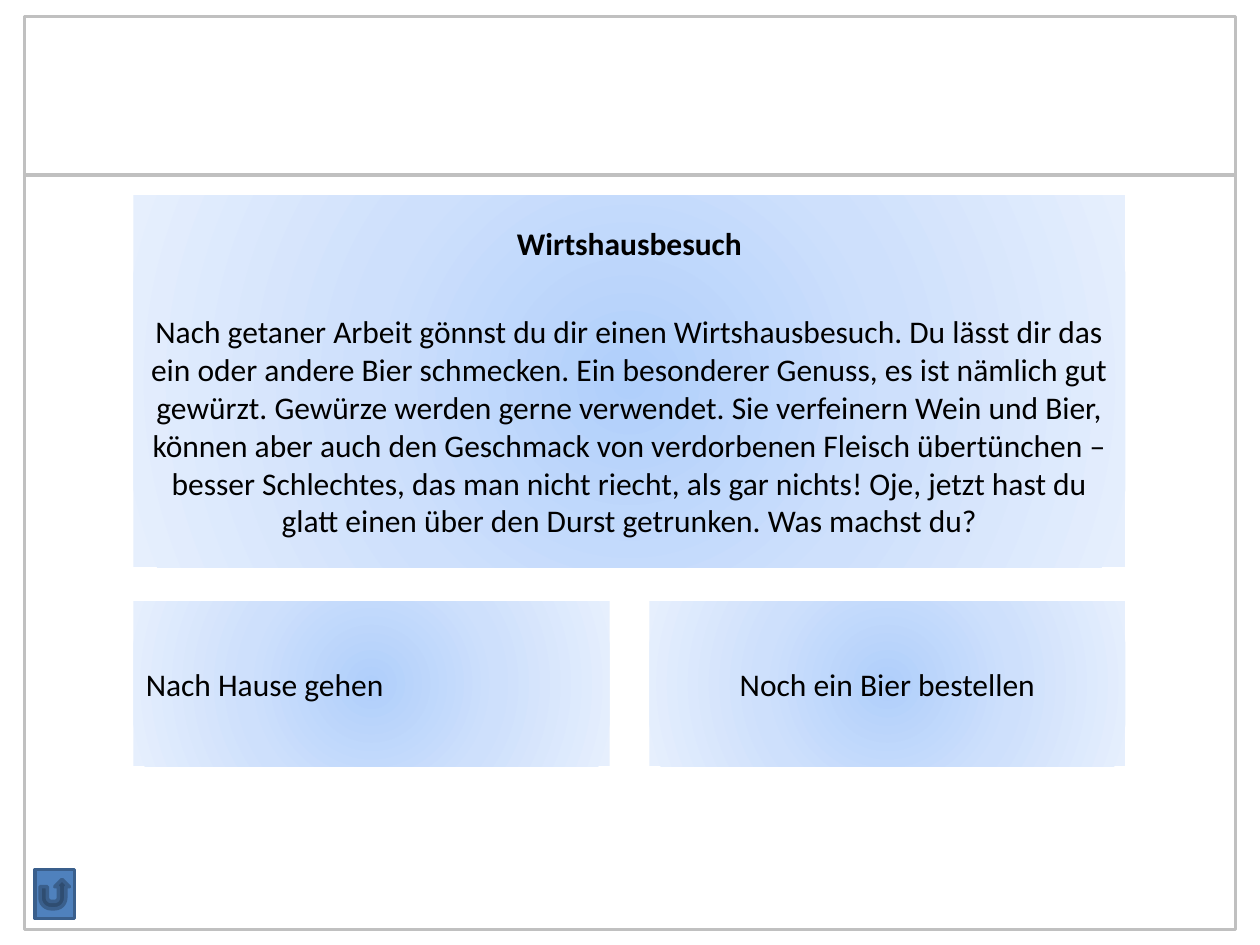
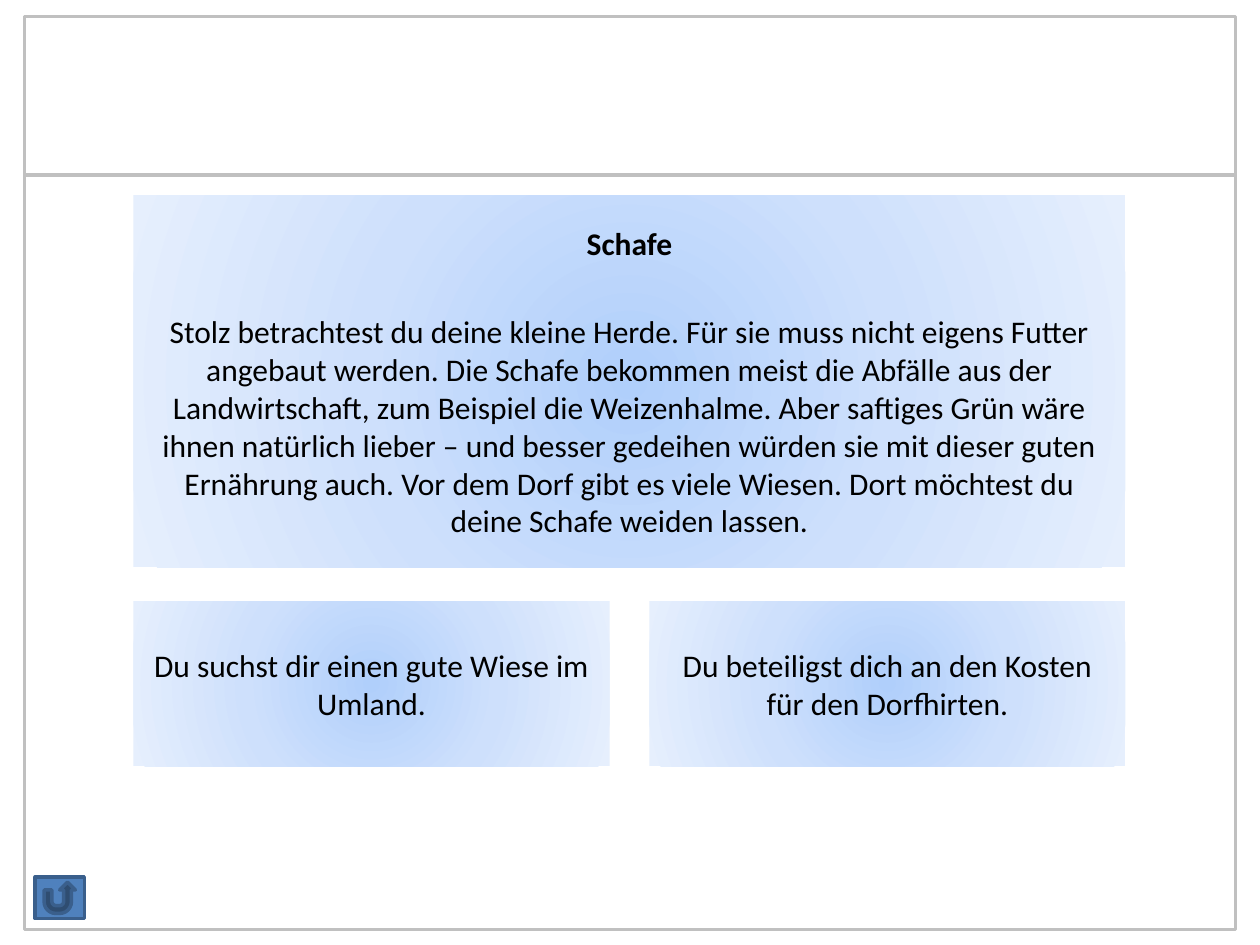
"""Build two decision slides, each with a story panel, two choices and a return button."""
from pptx import Presentation
from pptx.dml.color import RGBColor
from pptx.enum.shapes import MSO_SHAPE as Shape
from pptx.enum.text import MSO_ANCHOR as Anchor, PP_ALIGN as Align
from pptx.oxml import parse_xml
from pptx.oxml.ns import nsdecls, qn
from pptx.util import Cm, Pt

FONT = "Calibri"
TEXT, FRAME, BUTTON, BUTTON_EDGE = "000000", "C0C0C0", "4F81BD", "3A5F8C"
GLOW = [(0, "B0CFFB"), (50, "CEE0FC"), (100, "E6EFFD")]
LEFT, FULL_WIDTH, CHOICE_WIDTH = 2.69, 20, 9.6
CHOICE_LEFTS = [LEFT, LEFT + FULL_WIDTH - CHOICE_WIDTH]
BUTTON_BOTTOM = 18.52

stops = "".join(
    f'<a:gs pos="{percent * 1000}"><a:srgbClr val="{shade}"/></a:gs>' for percent, shade in GLOW
)
GLOW_XML = (
    f'<a:gradFill {nsdecls("a")} rotWithShape="1"><a:gsLst>{stops}</a:gsLst><a:path path="circle">'
    '<a:fillToRect l="50000" t="50000" r="50000" b="50000"/></a:path></a:gradFill>'
)

SCENES = [
    {
        "title": "Wirtshausbesuch",
        "story": "Nach getaner Arbeit gönnst du dir einen Wirtshausbesuch. Du lässt dir das ein "
        "oder andere Bier schmecken. Ein besonderer Genuss, es ist nämlich gut gewürzt. Gewürze "
        "werden gerne verwendet. Sie verfeinern Wein und Bier, können aber auch den Geschmack von "
        "verdorbenen Fleisch übertünchen – besser Schlechtes, das man nicht riecht, als gar "
        "nichts! Oje, jetzt hast du glatt einen über den Durst getrunken. Was machst du?",
        "choices": [("Nach Hause gehen", Align.LEFT), ("Noch ein Bier bestellen", Align.CENTER)],
        "button": (0.79, 0.99),
    },
    {
        "title": "Schafe",
        "story": "Stolz betrachtest du deine kleine Herde. Für sie muss nicht eigens Futter "
        "angebaut werden. Die Schafe bekommen meist die Abfälle aus der Landwirtschaft, zum "
        "Beispiel die Weizenhalme. Aber saftiges Grün wäre ihnen natürlich lieber – und besser "
        "gedeihen würden sie mit dieser guten Ernährung auch. Vor dem Dorf gibt es viele Wiesen. "
        "Dort möchtest du deine Schafe weiden lassen.",
        "choices": [
            ("Du suchst dir einen gute Wiese im Umland.", Align.CENTER),
            ("Du beteiligst dich an den Kosten für den Dorfhirten.", Align.CENTER),
        ],
        "button": (0.99, 0.84),
    },
]


def color(value):
    """Turn a hex string into a colour."""
    return RGBColor.from_string(value)


def add_panel(page, left, top, width, height, paragraphs):
    """Add a glowing panel holding (text, bold, alignment) paragraphs."""
    panel = page.shapes.add_shape(Shape.RECTANGLE, Cm(left), Cm(top), Cm(width), Cm(height))
    panel.shadow.inherit = False
    panel.line.fill.background()
    panel._element.spPr.find(qn("a:prstGeom")).addnext(parse_xml(GLOW_XML))
    frame = panel.text_frame
    frame.word_wrap = True
    frame.vertical_anchor = Anchor.MIDDLE
    for index, (text, bold, alignment) in enumerate(paragraphs):
        para = frame.add_paragraph() if index else frame.paragraphs[0]
        para.alignment = alignment
        if index:
            para.space_before = Pt(29)
        span = para.add_run()
        span.text = text
        span.font.name = FONT
        span.font.size = Pt(18)
        span.font.bold = bold
        span.font.color.rgb = color(TEXT)


deck = Presentation()
deck.slide_width, deck.slide_height = Cm(25.4), Cm(19.05)

for scene in SCENES:
    page = deck.slides.add_slide(deck.slide_layouts[6])

    for top, height in [(0.33, 3.2), (3.53, 15.21)]:
        border = page.shapes.add_shape(Shape.RECTANGLE, Cm(0.5), Cm(top), Cm(24.4), Cm(height))
        border.shadow.inherit = False
        border.fill.background()
        border.line.color.rgb = color(FRAME)
        border.line.width = Pt(1.75)

    story = [(scene["title"], True, Align.CENTER), (scene["story"], False, Align.CENTER)]
    add_panel(page, LEFT, 3.94, FULL_WIDTH, 7.5, story)
    for left, (text, alignment) in zip(CHOICE_LEFTS, scene["choices"]):
        add_panel(page, left, 12.12, CHOICE_WIDTH, 3.33, [(text, False, alignment)])

    width, height = scene["button"]
    button = page.shapes.add_shape(
        Shape.ACTION_BUTTON_RETURN, Cm(0.71), Cm(BUTTON_BOTTOM - height), Cm(width), Cm(height)
    )
    button.shadow.inherit = False
    button.fill.solid()
    button.fill.fore_color.rgb = color(BUTTON)
    button.line.color.rgb = color(BUTTON_EDGE)
    button.line.width = Pt(2)

deck.save("out.pptx")
